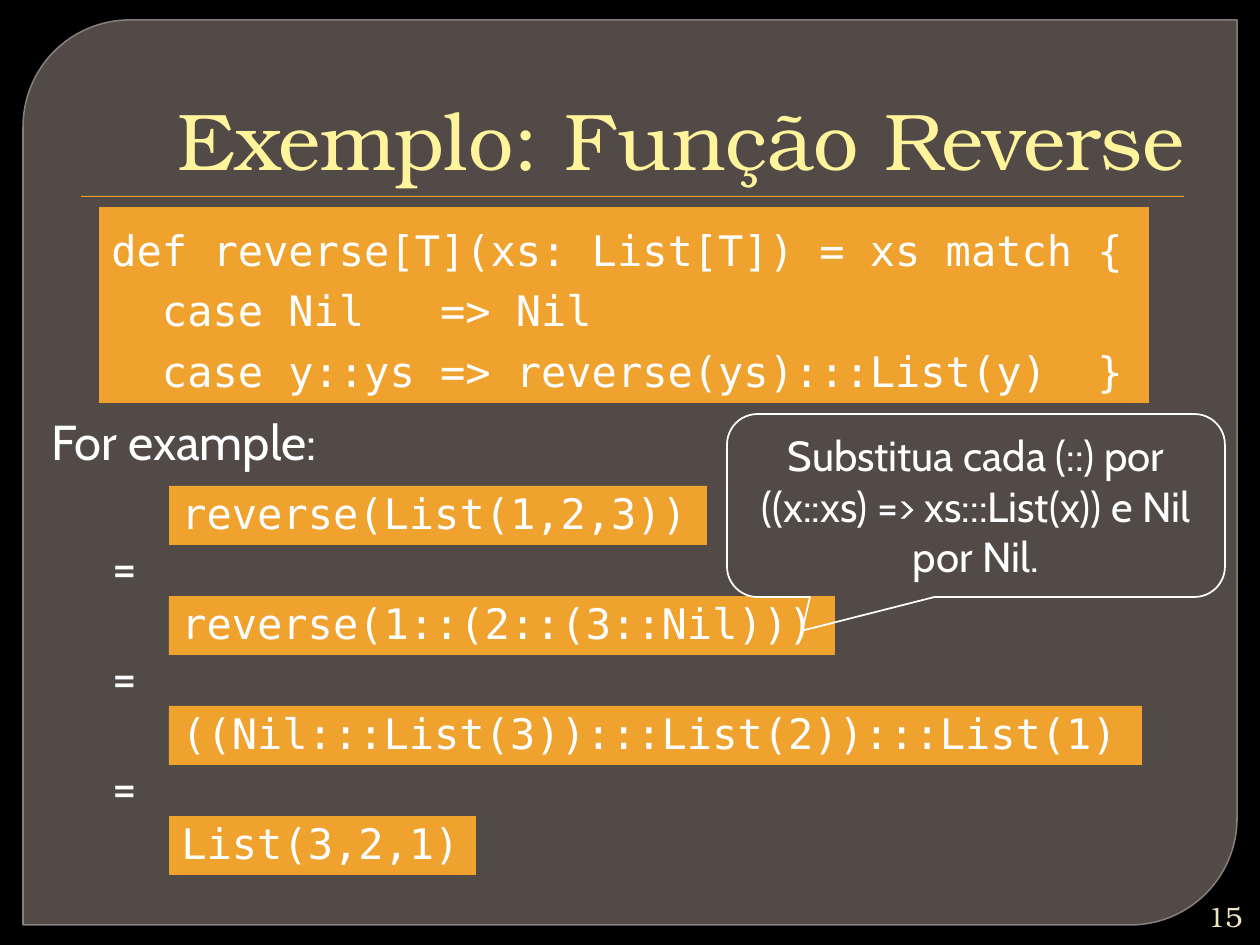
import pptx
import pptx.dml.color
import pptx.enum.shapes
import pptx.enum.text
import pptx.oxml
import pptx.oxml.ns
import pptx.util

SHAPE = pptx.enum.shapes.MSO_SHAPE
ALIGN = pptx.enum.text.PP_ALIGN
ANCHOR = pptx.enum.text.MSO_ANCHOR
AUTO_SIZE = pptx.enum.text.MSO_AUTO_SIZE

COLORS = {
    "background": "000000",
    "panel": "7D726E",
    "panel_line": "948A85",
    "accent": "F0A22E",
    "title": "FFF49C",
    "number": "F0E3C0",
    "text": "FFFFFF",
}
SERIF, SANS, MONO = "TeX Gyre Bonum", "Cabin", "DejaVu Sans Mono"
EMU_PER_PX = 914400 / 126


def px(*lengths):
    return [pptx.util.Emu(round(length * EMU_PER_PX)) for length in lengths]


def rgb(name):
    return pptx.dml.color.RGBColor.from_string(COLORS[name])


def set_opacity(element, percent):
    color = element.find(".//" + pptx.oxml.ns.qn("a:srgbClr"))
    alpha = pptx.oxml.parse_xml(
        f'<a:alpha {pptx.oxml.ns.nsdecls("a")} val="{percent * 1000}"/>')
    color.append(alpha)


class SlideBuilder:
    def __init__(self, presentation):
        self.slide = presentation.slides.add_slide(presentation.slide_layouts[5])
        self.slide.background.fill.solid()
        self.slide.background.fill.fore_color.rgb = rgb("background")

    def set_text(self, shape, text, font, size, color="text", align=ALIGN.LEFT,
                 anchor=ANCHOR.MIDDLE, wrap=True, grow=False, spacing=None):
        frame = shape.text_frame
        frame.text = text
        frame.word_wrap = wrap
        frame.auto_size = AUTO_SIZE.SHAPE_TO_FIT_TEXT if grow else AUTO_SIZE.NONE
        frame.vertical_anchor = anchor
        for paragraph in frame.paragraphs:
            paragraph.alignment = align
            if spacing:
                paragraph.line_spacing = spacing
            for run in paragraph.runs:
                run.font.name = font
                run.font.size = pptx.util.Pt(size)
                run.font.color.rgb = rgb(color)

    def title(self, box, text):
        title = self.slide.shapes.title
        title.left, title.top, title.width, title.height = px(*box)
        self.set_text(title, text, SERIF, 46, "title", ALIGN.RIGHT, ANCHOR.BOTTOM)

    def shape(self, kind, box, fill=None, line=None, weight=1, parent=None):
        shape = (parent or self.slide).shapes.add_shape(kind, *px(*box))
        shape.shadow.inherit = False
        if fill:
            shape.fill.solid()
            shape.fill.fore_color.rgb = rgb(fill)
        else:
            shape.fill.background()
        if line:
            shape.line.color.rgb = rgb(line)
            shape.line.width = pptx.util.Pt(weight)
        else:
            shape.line.fill.background()
        return shape

    def panel(self, box):
        """Rounded panel placed behind everything else."""
        panel = self.shape(SHAPE.ROUND_2_DIAG_RECTANGLE, box, "panel", "panel_line", 0.87)
        panel.adjustments[0], panel.adjustments[1] = 0.118, 0
        properties = panel._element.spPr
        set_opacity(properties.find(pptx.oxml.ns.qn("a:solidFill")), 65)
        set_opacity(properties.find(pptx.oxml.ns.qn("a:ln")), 88)
        tree = self.slide.shapes._spTree
        tree.remove(panel._element)
        tree.insert(2, panel._element)

    def rule(self, box):
        self.shape(SHAPE.RECTANGLE, box, "accent")

    def code(self, box, text, spacing=0.9, parent=None):
        shape = self.shape(SHAPE.RECTANGLE, box, "accent", parent=parent)
        self.set_text(shape, text, MONO, 24, wrap=False, grow=True, spacing=spacing)

    def label(self, box, text, font=SANS, size=28, parent=None, **style):
        label = (parent or self.slide).shapes.add_textbox(*px(*box))
        self.set_text(label, text, font, size, **style)

    def step(self, top, width, text):
        """Code line with an equals sign above and to its left."""
        group = self.slide.shapes.add_group_shape()
        self.code((169, top, width, 59), text, parent=group)
        self.label((95, top - 66, 60, 72), "=", parent=group,
                   align=ALIGN.CENTER, wrap=False, grow=True)

    def callout(self, box, text):
        shape = self.shape(SHAPE.ROUNDED_RECTANGULAR_CALLOUT, box, line="text")
        for index, value in enumerate((-0.349, 0.684, 0.167)):
            shape.adjustments[index] = value
        self.set_text(shape, text, SANS, 24, align=ALIGN.CENTER, grow=True)


def main():
    presentation = pptx.Presentation()
    presentation.slide_width, presentation.slide_height = px(1260, 945)
    builder = SlideBuilder(presentation)

    builder.panel((23, 20, 1214, 905))
    builder.rule((81, 196, 1103, 1))
    builder.title((63, 35, 1134, 158), "Exemplo: Função Reverse")
    builder.label((1191, 897, 64, 38), "15", SERIF, 16, color="number", align=ALIGN.RIGHT)

    builder.code((99, 207, 1050, 196),
                 "def reverse[T](xs: List[T]) = xs match {\n"
                 "  case Nil   => Nil\n"
                 "  case y::ys => reverse(ys):::List(y)  }", spacing=1.2)
    first_top, pitch = 486, 110
    builder.code((169, first_top, 538, 59), "reverse(List(1,2,3))")
    steps = [
        (666, "reverse(1::(2::(3::Nil)))"),
        (973, "((Nil:::List(3)):::List(2)):::List(1)"),
        (307, "List(3,2,1)"),
    ]
    for index, (width, text) in enumerate(steps, start=1):
        builder.step(first_top + index * pitch, width, text)

    builder.label((39, 405, 309, 72), "For example:", wrap=False, grow=True)
    builder.callout((727, 414, 498, 183),
                    "Substitua cada (::) por ((x::xs) => xs:::List(x)) e Nil por Nil.")
    presentation.save("out.pptx")


if __name__ == "__main__":
    main()
